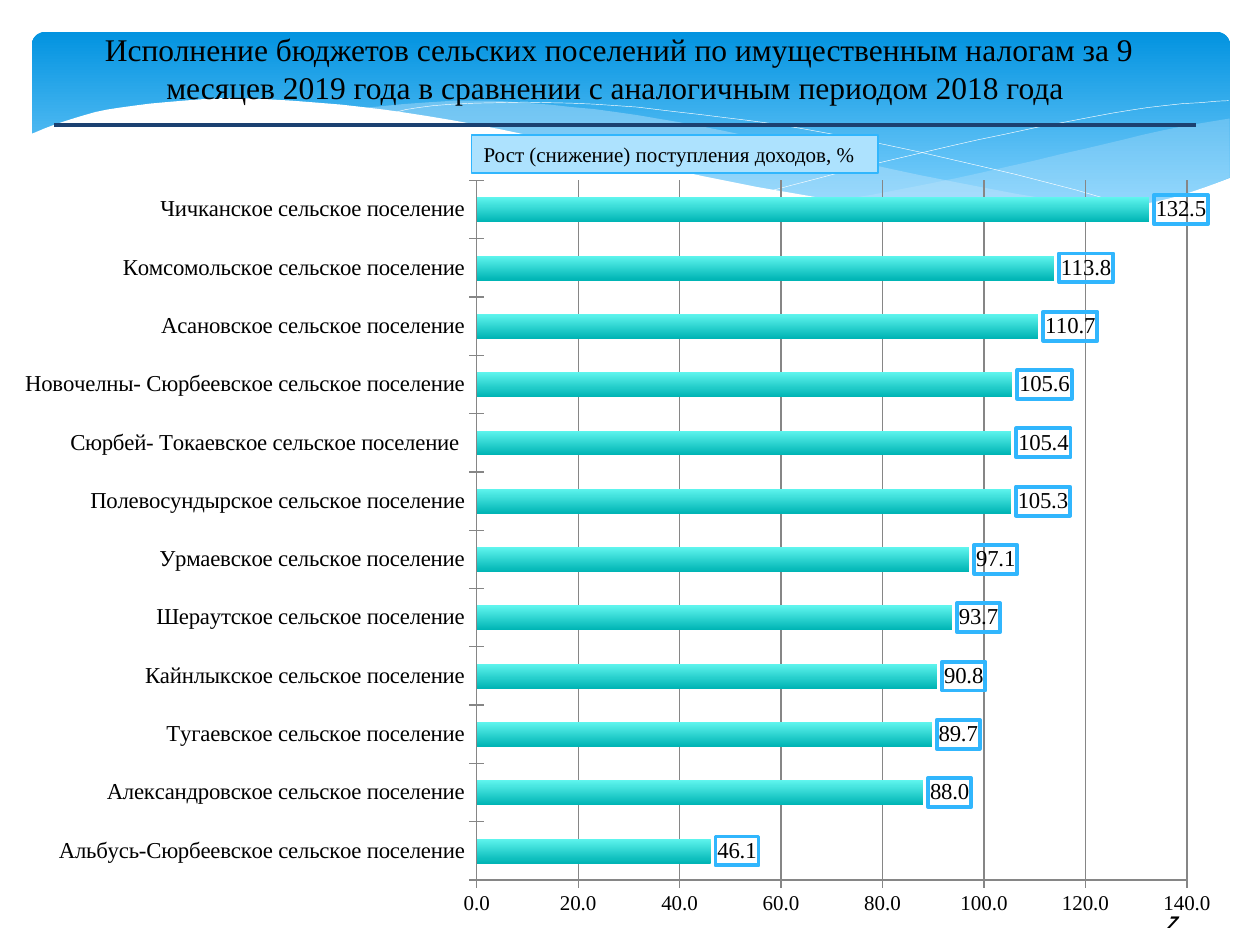
from dataclasses import dataclass

from lxml.etree import SubElement
from pptx import Presentation
from pptx.chart.data import CategoryChartData
from pptx.dml.color import RGBColor
from pptx.enum.chart import XL_CHART_TYPE as ChartType
from pptx.enum.chart import XL_LABEL_POSITION as LabelPosition
from pptx.enum.chart import XL_TICK_MARK as TickMark
from pptx.enum.shapes import MSO_CONNECTOR as Connector
from pptx.enum.shapes import MSO_SHAPE as Shape
from pptx.enum.text import MSO_ANCHOR as Anchor
from pptx.enum.text import PP_ALIGN as Align
from pptx.oxml import parse_xml
from pptx.oxml.ns import nsdecls, qn
from pptx.util import Cm, Pt


@dataclass(frozen=True)
class Theme:
    """Colours, fonts and type sizes of the slide."""
    black: str = "000000"
    white: str = "FFFFFF"
    band: tuple = ("0293E0", "83D3FE")
    swoosh: str = "C6E7FC"
    rule: str = "1B4171"
    accent: str = "31B6FD"
    caption: str = "ADE2FE"
    bar: tuple = ("5FF5EE", "00B5B5")
    axis: str = "868686"
    serif: str = "Times New Roman"
    number: str = "League Spartan"
    title_size: int = 18
    label_size: int = 13
    small_size: int = 12
    number_size: int = 10


THEME = Theme()
TITLE = ("Исполнение бюджетов сельских поселений по имущественным налогам за 9 "
         "месяцев 2019 года в сравнении с аналогичным периодом 2018 года \v")
CAPTION = "Рост (снижение) поступления доходов, %"
INCOME = {
    "Альбусь-Сюрбеевское сельское поселение": 46.1,
    "Александровское сельское поселение": 88.0,
    "Тугаевское сельское поселение": 89.7,
    "Кайнлыкское сельское поселение": 90.8,
    "Шераутское сельское поселение": 93.7,
    "Урмаевское сельское поселение": 97.1,
    "Полевосундырское сельское поселение": 105.3,
    "Сюрбей- Токаевское сельское поселение ": 105.4,
    "Новочелны- Сюрбеевское сельское поселение": 105.6,
    "Асановское сельское поселение": 110.7,
    "Комсомольское сельское поселение": 113.8,
    "Чичканское сельское поселение": 132.5,
}
RIGHT_TOP = [(24.19, 1.79), (22.79, 2.04), (21.27, 2.4), (19.19, 2.88), (17.33, 3.26), (16.19, 3.46)]
RIGHT_BOTTOM = [(16.19, 3.46), (17.31, 3.59), (18.63, 3.72), (20.08, 3.77), (21.55, 3.69),
                (22.97, 3.41), (24.19, 2.98)]
MIDDLE_TOP = [(22.08, 3.64), (19.9, 3.31), (17.33, 2.8), (15.38, 2.35), (13.5, 1.94),
              (11.82, 1.66), (10.07, 1.48), (8.57, 1.43), (6.66, 1.58)]
MIDDLE_BOTTOM = [(6.66, 1.58), (8.59, 1.86), (10.8, 2.35), (13.78, 3.03), (15.91, 3.41),
                 (17.74, 3.67), (19.34, 3.77), (20.69, 3.77), (22.08, 3.64)]
FALLING_LINE = [(7.25, 1.69), (8.14, 1.53), (9.97, 1.46), (11.82, 1.53), (13.52, 1.71),
                (15.55, 1.99), (17.87, 2.45), (20.51, 3.08), (22.44, 3.62)]
RISING_LINE = [(14.97, 3.24), (17.05, 2.7), (19.11, 2.22), (21.4, 1.76), (22.87, 1.53), (24.17, 1.43)]
WHITE_WAVE = [(24.22, 2.98), (23.02, 3.39), (21.63, 3.64), (19.95, 3.74), (18.3, 3.67),
              (16.37, 3.46), (14.11, 3.06), (12.18, 2.65), (10.02, 2.12), (8.01, 1.74),
              (6.28, 1.51), (4.3, 1.38), (2.75, 1.46), (1.56, 1.61), (0.72, 1.84), (-0.02, 2.12)]
WAVE_CORNERS = [(-0.02, 5.08), (24.22, 5.08)]


def rgb(code):
    """Turn a hex code into a colour."""
    return RGBColor.from_string(code)


def set_font(font, size, name=THEME.serif):
    """Set the face, size and black colour of a font."""
    font.name, font.size = name, Pt(size)
    font.color.rgb = rgb(THEME.black)


def fill_gradient(fill, colors, end=1.0):
    """Fill from top to bottom with two colours."""
    fill.gradient()
    fill.gradient_angle = 270
    for stop, color, position in zip(fill.gradient_stops, colors, (0, end)):
        stop.color.rgb = rgb(color)
        stop.position = position


def smooth(points, steps=4):
    """Run a Catmull-Rom curve through the points."""
    padded = [points[0], *points, points[-1]]
    curve = []
    for a, b, c, d in zip(padded, padded[1:], padded[2:], padded[3:]):
        for t in (step / steps for step in range(steps)):
            curve.append(tuple(
                q + t * (r - p + t * (2 * p - 5 * q + 4 * r - s + t * (3 * q - p - 3 * r + s))) / 2
                for p, q, r, s in zip(a, b, c, d)))
    return curve + [points[-1]]


def add_curve(page, box, points, fill=None, alpha=100):
    """Draw a filled outline, or a thin white line when there is no fill."""
    units = [(x * 100, y * 100) for x, y in points]
    builder = page.shapes.build_freeform(*units[0], scale=Cm(0.01))
    builder.add_line_segments(units[1:], close=fill is not None)
    shape = builder.convert_to_shape(Cm(box[0]), Cm(box[1]))
    shape.shadow.inherit = False
    if fill is None:
        shape.fill.background()
        shape.line.color.rgb = rgb(THEME.white)
        shape.line.width = Pt(0.25)
        return
    shape.fill.solid()
    shape.fill.fore_color.rgb = rgb(fill)
    shape.line.fill.background()
    color = shape._element.spPr.find(qn("a:solidFill"))[0]
    SubElement(color, qn("a:alpha"), val=str(alpha * 1000))


def add_header(page, box):
    """Draw the blue band with its waves."""
    left, top, width, _ = box
    band = page.shapes.add_shape(Shape.ROUNDED_RECTANGLE, Cm(left + 0.04), Cm(top + 0.04),
                                 Cm(width - 0.04), Cm(3.96))
    band.adjustments[0] = 0.07
    band.shadow.inherit = False
    fill_gradient(band.fill, THEME.band, 0.9)
    band.line.fill.background()
    add_curve(page, box, smooth(RIGHT_TOP) + smooth(RIGHT_BOTTOM), THEME.swoosh, 29)
    add_curve(page, box, smooth(MIDDLE_TOP) + smooth(MIDDLE_BOTTOM), THEME.swoosh, 40)
    add_curve(page, box, smooth(FALLING_LINE))
    add_curve(page, box, smooth(RISING_LINE))
    add_curve(page, box, smooth(WHITE_WAVE) + WAVE_CORNERS, THEME.white)


def add_text(page, box, text, size, name=THEME.serif):
    """Place one centred paragraph in the middle of the box."""
    frame = page.shapes.add_textbox(*map(Cm, box)).text_frame
    frame.word_wrap = True
    frame.vertical_anchor = Anchor.MIDDLE
    para = frame.paragraphs[0]
    para.text, para.alignment = text, Align.CENTER
    set_font(para.font, size, name)
    return para


def add_title(page, box):
    """Place the title and the rule below it."""
    left, top, width, height = box
    add_text(page, box, TITLE, THEME.title_size)
    y = Cm(top + height - 0.23)
    rule = page.shapes.add_connector(Connector.STRAIGHT, Cm(left + 0.2), y, Cm(left + width + 0.02), y)
    rule.line.color.rgb = rgb(THEME.rule)
    rule.line.width = Pt(2.25)
    SubElement(rule._element.spPr, qn("a:effectLst"))


def add_caption(page, box):
    """Place the caption panel above the bars."""
    panel = page.shapes.add_shape(Shape.RECTANGLE, *map(Cm, box))
    panel.shadow.inherit = False
    panel.fill.solid()
    panel.fill.fore_color.rgb = rgb(THEME.caption)
    panel.line.color.rgb = rgb(THEME.accent)
    panel.line.width = Pt(0.75)
    panel.text_frame.vertical_anchor = Anchor.TOP
    para = panel.text_frame.paragraphs[0]
    para.text, para.alignment = CAPTION, Align.LEFT
    set_font(para.font, THEME.small_size)


def add_income_chart(page, box):
    """Place the bar chart of income by settlement."""
    data = CategoryChartData(number_format="0.0")
    data.categories = list(INCOME)
    data.add_series("Series 1", list(INCOME.values()))
    chart = page.shapes.add_chart(ChartType.BAR_CLUSTERED, *map(Cm, box), data).chart
    chart.has_legend = chart.has_title = False
    chart._chartSpace.chart.plotArea.insert(0, parse_xml(
        f'<c:layout {nsdecls("c")}><c:manualLayout><c:layoutTarget val="inner"/>'
        '<c:xMode val="edge"/><c:yMode val="edge"/><c:x val="0.386"/><c:y val="0.02"/>'
        '<c:w val="0.575"/><c:h val="0.916"/></c:manualLayout></c:layout>'))
    for axis, size in ((chart.category_axis, THEME.label_size), (chart.value_axis, THEME.small_size)):
        axis.major_tick_mark = TickMark.CROSS
        axis.format.line.color.rgb = rgb(THEME.axis)
        set_font(axis.tick_labels.font, size)
    values = chart.value_axis
    values.minimum_scale, values.maximum_scale, values.major_unit = 0, 140, 20
    values.major_gridlines.format.line.color.rgb = rgb(THEME.axis)
    values.tick_labels.number_format = "0.0"
    values.tick_labels.number_format_is_linked = False
    plot = chart.plots[0]
    plot.gap_width, plot.vary_by_categories = 140, False
    fill_gradient(plot.series[0].format.fill, THEME.bar)
    labels = plot.series[0].data_labels
    labels.show_value, labels.position = True, LabelPosition.OUTSIDE_END
    labels.number_format, labels.number_format_is_linked = "0.0", False
    set_font(labels.font, THEME.label_size)
    labels._element.find(qn("c:numFmt")).addnext(parse_xml(
        f'<c:spPr {nsdecls("c", "a")}><a:noFill/><a:ln w="{Pt(2.25)}"><a:solidFill>'
        f'<a:srgbClr val="{THEME.accent}"/></a:solidFill></a:ln></c:spPr>'))


def main():
    """Build the slide and save the deck."""
    deck = Presentation()
    deck.slide_width, deck.slide_height = Cm(25.4), Cm(19.05)
    page = deck.slides.add_slide(deck.slide_layouts[6])
    add_header(page, (0.6, 0.6, 24.2, 5.08))
    number = add_text(page, (22.15, 18.06, 2.92, 1.02), "7", THEME.number_size, THEME.number)
    number.font.bold = number.font.italic = True
    add_title(page, (0.89, 0.74, 23.19, 2.01))
    add_income_chart(page, (0, 3.33, 24.9, 15.4))
    add_caption(page, (9.5, 2.72, 8.2, 0.77))
    deck.save("out.pptx")


if __name__ == "__main__":
    main()
